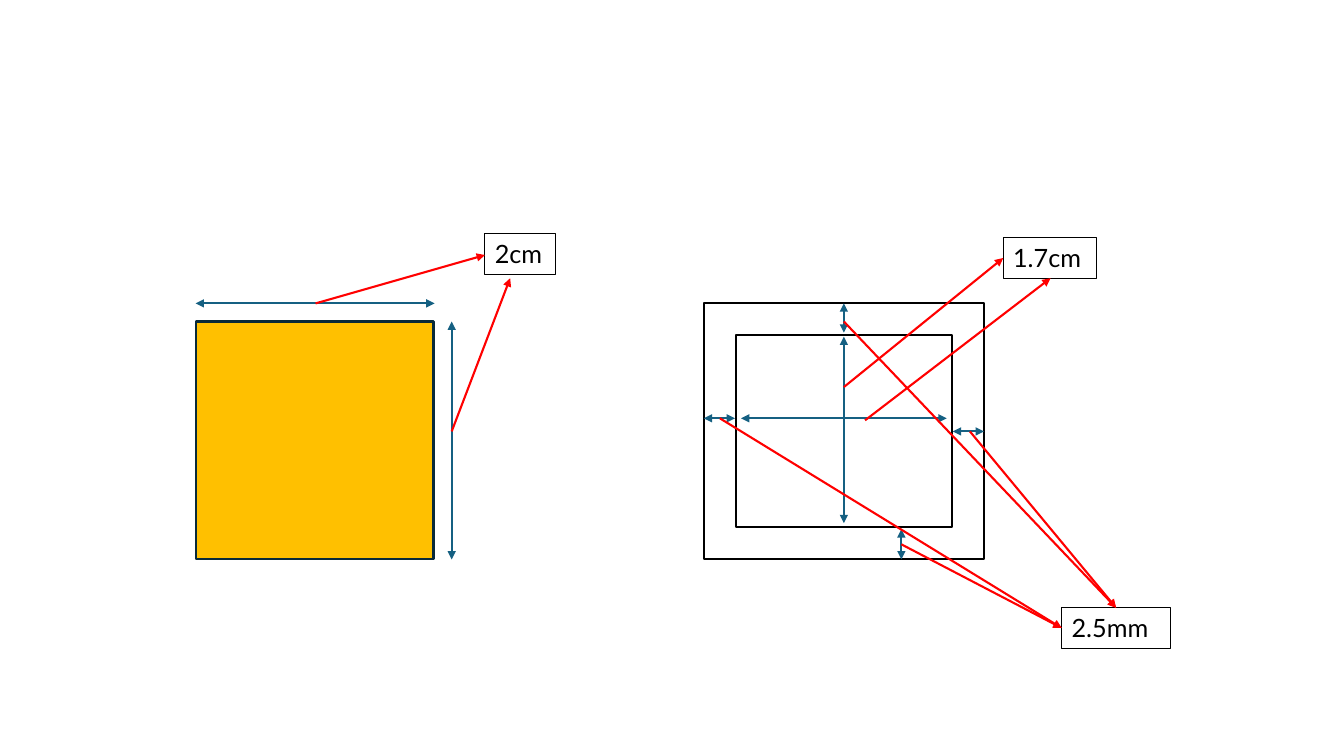
from dataclasses import dataclass

from lxml.etree import SubElement
from pptx import Presentation
from pptx.dml.color import RGBColor
from pptx.enum.shapes import MSO_CONNECTOR, MSO_SHAPE
from pptx.enum.text import MSO_AUTO_SIZE
from pptx.oxml.ns import qn
from pptx.slide import Slide
from pptx.util import Inches, Pt

COLORS = {
    "tile": "FFC000",
    "tile_edge": "092A39",
    "black": "000000",
    "dimension": "156082",
    "pointer": "FF0000",
}
FONT = "Lato"
LINE_WIDTH = 1.5
LABEL_HEIGHT = 0.4


@dataclass(frozen=True)
class Outline:
    preset: MSO_SHAPE
    left: float
    top: float
    width: float
    height: float
    edge: str
    fill: str | None = None


@dataclass(frozen=True)
class Arrow:
    x1: float
    y1: float
    x2: float
    y2: float


@dataclass(frozen=True)
class Label:
    text: str
    left: float
    top: float
    width: float


OUTLINES = [
    Outline(MSO_SHAPE.RECTANGLE, 1.94, 3.19, 2.36, 2.36, "tile_edge", "tile"),
    Outline(MSO_SHAPE.FRAME, 6.98, 3.01, 2.78, 2.54, "black"),
]

DIMENSIONS = [
    Arrow(1.94, 3.01, 4.31, 3.01),
    Arrow(7.35, 4.15, 9.39, 4.15),
    Arrow(4.48, 3.19, 4.48, 5.55),
    Arrow(9.76, 4.28, 9.45, 4.28),
    Arrow(8.37, 5.19, 8.37, 3.34),
    Arrow(8.94, 5.55, 8.94, 5.25),
    Arrow(7.29, 4.15, 6.98, 4.15),
    Arrow(8.37, 3.3, 8.37, 3.01),
]

LABELS = [
    Label("2cm", 4.81, 2.32, 0.7),
    Label("1.7cm", 9.95, 2.36, 0.93),
    Label("2.5mm", 10.53, 6.03, 1.08),
]

POINTERS = [
    Arrow(4.48, 4.28, 5.06, 2.76),
    Arrow(3.13, 3.01, 4.81, 2.53),
    Arrow(8.37, 3.19, 11.07, 6.03),
    Arrow(7.14, 4.15, 10.53, 6.23),
    Arrow(8.94, 5.4, 10.53, 6.23),
    Arrow(9.62, 4.28, 11.07, 6.03),
    Arrow(8.37, 3.84, 9.95, 2.56),
    Arrow(8.58, 4.17, 10.42, 2.76),
]


def rgb(color: str) -> RGBColor:
    return RGBColor.from_string(COLORS[color])


def draw_outline(slide: Slide, outline: Outline) -> None:
    figure = slide.shapes.add_shape(
        outline.preset,
        Inches(outline.left),
        Inches(outline.top),
        Inches(outline.width),
        Inches(outline.height),
    )
    figure.shadow.inherit = False
    if outline.fill:
        figure.fill.solid()
        figure.fill.fore_color.rgb = rgb(outline.fill)
    else:
        figure.fill.background()
    figure.line.color.rgb = rgb(outline.edge)
    figure.line.width = Pt(LINE_WIDTH)


def draw_arrow(slide: Slide, arrow: Arrow, color: str, ends: tuple[str, ...]) -> None:
    connector = slide.shapes.add_connector(
        MSO_CONNECTOR.STRAIGHT,
        Inches(arrow.x1),
        Inches(arrow.y1),
        Inches(arrow.x2),
        Inches(arrow.y2),
    )
    connector.line.color.rgb = rgb(color)
    connector.line.width = Pt(LINE_WIDTH)
    properties = connector._element.spPr
    stroke = properties.find(qn("a:ln"))
    for end in ends:
        SubElement(stroke, qn(end), type="triangle")
    SubElement(properties, qn("a:effectLst"))


def write_text(
    slide: Slide,
    text: str,
    *,
    left: float,
    top: float,
    width: float,
    height: float = LABEL_HEIGHT,
    size: float = 18,
    color: str = "black",
    border: str = "black",
    border_width: float = 0.75,
) -> None:
    label = slide.shapes.add_textbox(
        Inches(left), Inches(top), Inches(width), Inches(height)
    )
    label.line.color.rgb = rgb(border)
    label.line.width = Pt(border_width)
    frame = label.text_frame
    frame.word_wrap = True
    frame.auto_size = MSO_AUTO_SIZE.SHAPE_TO_FIT_TEXT
    run = frame.paragraphs[0].add_run()
    run.text = text
    run.font.name = FONT
    run.font.size = Pt(size)
    run.font.color.rgb = rgb(color)


def main() -> None:
    presentation = Presentation()
    presentation.slide_width = Inches(13.33)
    presentation.slide_height = Inches(7.5)
    slide = presentation.slides.add_slide(presentation.slide_layouts[6])

    for outline in OUTLINES:
        draw_outline(slide, outline)
    for dimension in DIMENSIONS:
        draw_arrow(slide, dimension, "dimension", ("a:headEnd", "a:tailEnd"))
    for label in LABELS:
        write_text(slide, label.text, left=label.left, top=label.top, width=label.width)
    for pointer in POINTERS:
        draw_arrow(slide, pointer, "pointer", ("a:tailEnd",))

    presentation.save("out.pptx")


if __name__ == "__main__":
    main()
